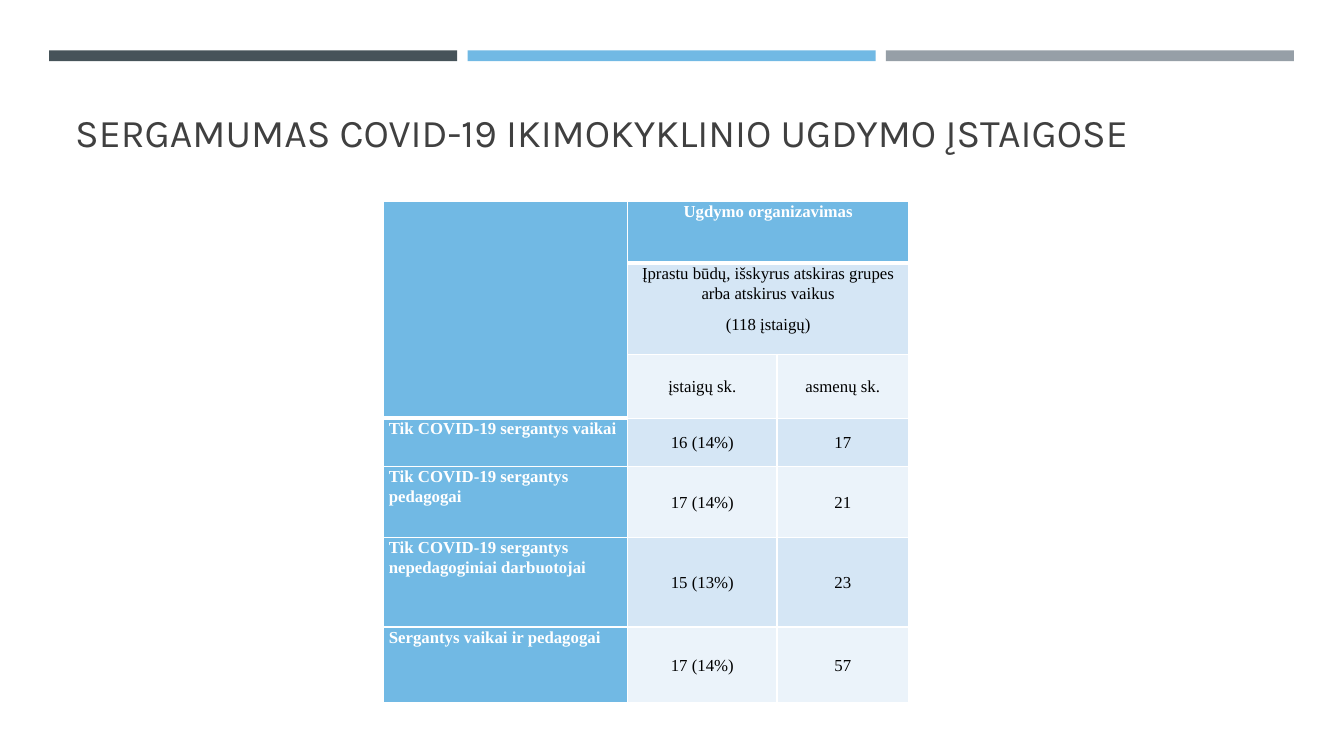
import pptx
import pptx.util
import pptx.dml.color
import pptx.enum.shapes
import pptx.enum.text
import pptx.oxml
import pptx.oxml.ns

Cm = pptx.util.Cm
Pt = pptx.util.Pt
ALIGN = pptx.enum.text.PP_ALIGN
ANCHOR = pptx.enum.text.MSO_ANCHOR

COLOURS = {
    "slate": "465359",
    "blue": "71B9E4",
    "grey": "969FA7",
    "title": "404040",
    "band_dark": "D5E6F5",
    "band_light": "EBF3FA",
    "white": "FFFFFF",
    "black": "000000",
}
TITLE = "SERGAMUMAS COVID-19 IKIMOKYKLINIO UGDYMO ĮSTAIGOSE"
COLUMN_WIDTHS = [6.17, 3.76, 3.32]
ROW_HEIGHTS = [1.55, 2.31, 1.6, 1.22, 1.78, 2.26, 1.91]
ROWS = [
    ["", "Ugdymo organizavimas", ""],
    ["", "Įprastu būdų, išskyrus atskiras grupes arba atskirus vaikus\n(118 įstaigų)", ""],
    ["", "įstaigų sk.", "asmenų sk."],
    ["Tik COVID-19 sergantys vaikai", "16 (14%)", "17"],
    ["Tik COVID-19 sergantys pedagogai", "17 (14%)", "21"],
    ["Tik COVID-19 sergantys nepedagoginiai darbuotojai", "15 (13%)", "23"],
    ["Sergantys vaikai ir pedagogai", "17 (14%)", "57"],
]
MERGES = [((0, 0), (2, 0)), ((0, 1), (0, 2)), ((1, 1), (1, 2))]


def colour(name):
    """Return the named colour as an RGB value."""
    return pptx.dml.color.RGBColor.from_string(COLOURS[name])


def apply_format(target, values):
    """Set every attribute in values on the target."""
    for name, value in values.items():
        setattr(target, name, value)


def add_bars(slide, left, top, width, height):
    """Draw three equal colour bars across the given box."""
    gap = 0.26
    bar_width = (width - 2 * gap) / 3
    for index, name in enumerate(["slate", "blue", "grey"]):
        bar = slide.shapes.add_shape(
            pptx.enum.shapes.MSO_SHAPE.RECTANGLE,
            Cm(left + index * (bar_width + gap)), Cm(top), Cm(bar_width), Cm(height))
        bar.shadow.inherit = False
        bar.fill.solid()
        bar.fill.fore_color.rgb = colour(name)
        bar.line.fill.background()


def add_title(slide, left, top, width, height):
    """Place the title placeholder in the given box."""
    title = slide.shapes.title
    apply_format(title, {"left": Cm(left), "top": Cm(top), "width": Cm(width), "height": Cm(height)})
    apply_format(title.text_frame, {"text": TITLE, "vertical_anchor": ANCHOR.BOTTOM, "word_wrap": True})
    paragraph = title.text_frame.paragraphs[0]
    apply_format(paragraph, {"alignment": ALIGN.LEFT, "line_spacing": 0.9})
    apply_format(paragraph.font, {"name": "Karla", "size": Pt(28), "bold": False})
    paragraph.font.color.rgb = colour("title")


def set_borders(cell, thick_sides):
    """Give a cell white borders, thicker on the named sides."""
    properties = cell._tc.get_or_add_tcPr()
    for position, side in enumerate("LRTB"):
        width = Pt(3 if side in thick_sides else 1)
        border = pptx.oxml.parse_xml(
            f'<a:ln{side} {pptx.oxml.ns.nsdecls("a")} w="{width}"><a:solidFill>'
            f'<a:srgbClr val="{COLOURS["white"]}"/></a:solidFill></a:ln{side}>')
        properties.insert(position, border)


def format_cell(cell, row, column):
    """Fill, border and set the text of one table cell."""
    heading = row == 0 or column == 0
    band = "band_dark" if row % 2 else "band_light"
    centred = row > 1 and column > 0
    apply_format(cell, {
        "text": ROWS[row][column],
        "margin_left": Cm(0.15), "margin_right": Cm(0.15), "margin_top": 0, "margin_bottom": 0,
        "vertical_anchor": ANCHOR.MIDDLE if centred else ANCHOR.TOP,
    })
    cell.fill.solid()
    cell.fill.fore_color.rgb = colour("blue" if heading else band)
    header_end = 2 if column == 0 else 0
    thick_sides = {header_end: "B", header_end + 1: "T"}.get(row, "")
    set_borders(cell, "B" if row == 0 else thick_sides)
    for paragraph in cell.text_frame.paragraphs:
        apply_format(paragraph, {
            "alignment": ALIGN.CENTER if column else ALIGN.LEFT,
            "line_spacing": 1.07, "space_after": Pt(8)})
        apply_format(paragraph.font, {"name": "Times New Roman", "size": Pt(12), "bold": heading})
        paragraph.font.color.rgb = colour("white" if heading else "black")


def add_illness_table(slide, left, top, width, height):
    """Place the illness table in the given box."""
    table = slide.shapes.add_table(
        len(ROWS), len(COLUMN_WIDTHS), Cm(left), Cm(top), Cm(width), Cm(height)).table
    for column, share in zip(table.columns, COLUMN_WIDTHS):
        column.width = Cm(width * share / sum(COLUMN_WIDTHS))
    for row, share in zip(table.rows, ROW_HEIGHTS):
        row.height = Cm(height * share / sum(ROW_HEIGHTS))
    for row in range(len(ROWS)):
        for column in range(len(COLUMN_WIDTHS)):
            format_cell(table.cell(row, column), row, column)
    for first, last in MERGES:
        table.cell(*first).merge(table.cell(*last))


def main():
    """Build the slide and save the presentation."""
    presentation = pptx.Presentation()
    apply_format(presentation, {"slide_width": Cm(33.87), "slide_height": Cm(19.05)})
    slide = presentation.slides.add_slide(presentation.slide_layouts[5])
    add_bars(slide, 1.24, 1.27, 31.37, 0.27)
    add_title(slide, 1.64, 1.96, 30.63, 2.1)
    add_illness_table(slide, 9.65, 5.08, 13.25, 12.63)
    presentation.save("out.pptx")


if __name__ == "__main__":
    main()
